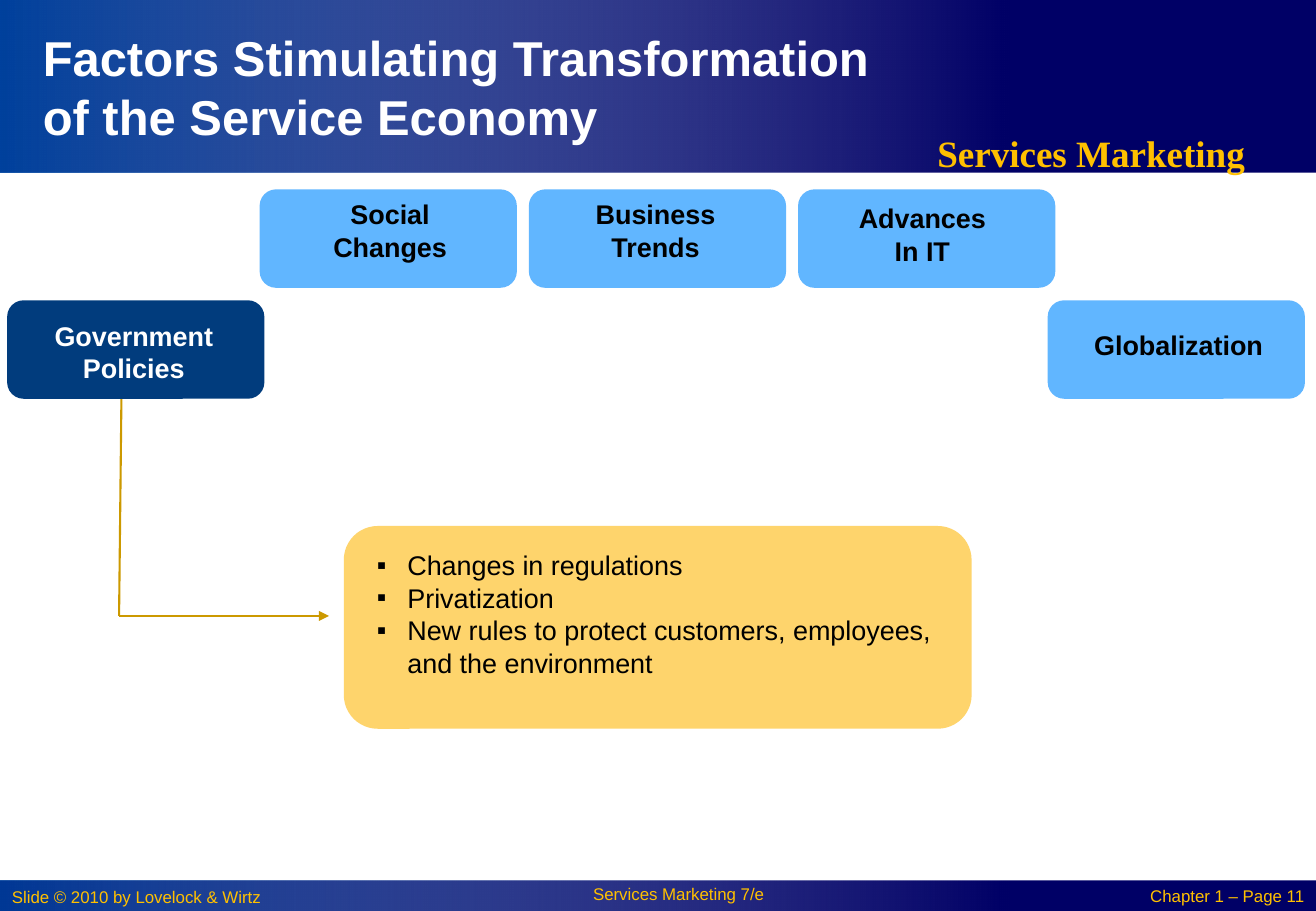
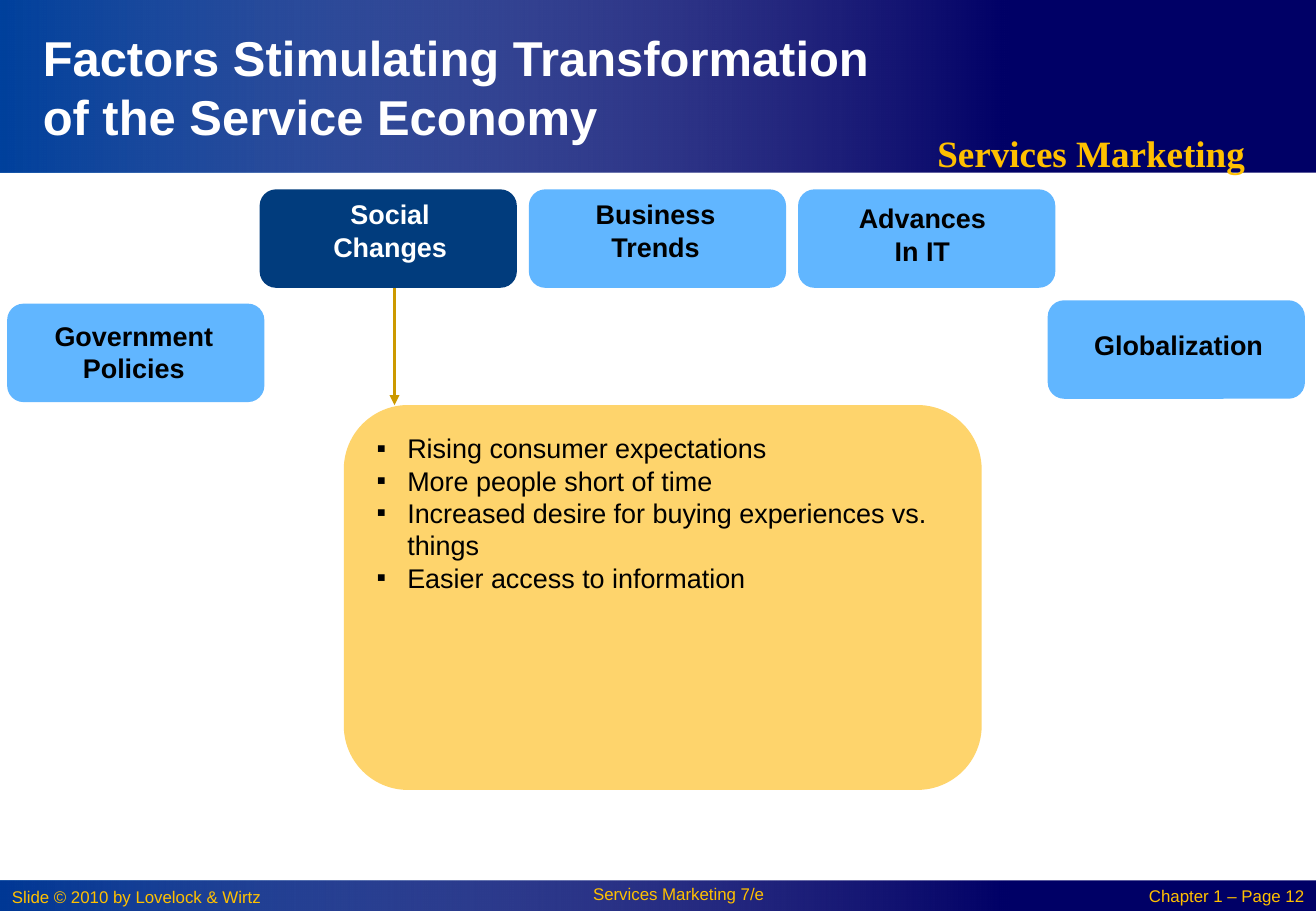
import pptx
import pptx.dml.color
import pptx.enum.dml
import pptx.enum.shapes
import pptx.enum.text
import pptx.oxml.ns
import pptx.util
from lxml import etree

Cm = pptx.util.Cm
Pt = pptx.util.Pt
Shape = pptx.enum.shapes.MSO_SHAPE
Align = pptx.enum.text.PP_ALIGN
Anchor = pptx.enum.text.MSO_ANCHOR
qn = pptx.oxml.ns.qn

WIDTH, HEIGHT = 27.52, 19.05
FADE_WIDTH = 21.16
HEADER_HEIGHT = 3.61
FOOTER_TOP = 18.41
TAB_WIDTH, TAB_HEIGHT = 5.38, 2.06
ROW_LEFT, ROW_PITCH, ROW_TOP = 5.43, 5.63, 3.96
SIDE_TOP = 6.28
CORNER = 0.167

NAVY, BLUE, WHITE, BLACK = "000066", "0152AB", "FFFFFF", "000000"
GOLD, LINE_GOLD, PANEL = "FFC000", "CC9900", "FED46C"
TAB, TAB_ACTIVE = "61B6FF", "013C7D"

TITLE = "Factors Stimulating Transformation of the Service Economy"

# lines, left, top, top of the text, sideways shift of the text
TABS = [
    (["Government", "Policies"], 0.15, SIDE_TOP, 6.68, -0.04),
    (["Social", "Changes"], ROW_LEFT, ROW_TOP, 4.14, 0.04),
    (["Business", "Trends"], ROW_LEFT + ROW_PITCH, ROW_TOP, 4.14, -0.04),
    (["Advances", "In IT"], ROW_LEFT + 2 * ROW_PITCH, ROW_TOP, 4.22, -0.09),
    (["Globalization"], 21.91, SIDE_TOP, 6.88, 0.05),
]

SLIDES = [
    {
        "page": 11,
        "active": "Government",
        "government_top": SIDE_TOP,
        "arrow": [(2.54, 8.26), (2.49, 12.88), (6.88, 12.88)],
        "panel": (7.19, 11, 13.13, 4.24),
        "margins": (0.69, 0.48, 0.58),
        "bullets": [
            "Changes in regulations",
            "Privatization",
            "New rules to protect customers, employees, and the environment",
        ],
    },
    {
        "page": 12,
        "active": "Social",
        "government_top": 6.35,
        "arrow": [(8.25, 5.92), (8.25, 8.47)],
        "panel": (7.19, 8.47, 13.34, 8.05),
        "margins": (0.69, 0.56, 0.46),
        "bullets": [
            "Rising consumer expectations",
            "More people short of time",
            "Increased desire for buying experiences vs. things",
            "Easier access to information",
        ],
    },
]


def color(value):
    return pptx.dml.color.RGBColor.from_string(value)


def assign(target, values):
    for name, value in values.items():
        setattr(target, name, value)


class Deck:
    def __init__(self):
        self.prs = pptx.Presentation()
        self.prs.slide_width, self.prs.slide_height = Cm(WIDTH), Cm(HEIGHT)
        self.s = None

    def new_slide(self, page):
        self.s = self.prs.slides.add_slide(self.prs.slide_layouts[5])
        self.band(FOOTER_TOP, HEIGHT - FOOTER_TOP, 69)
        self.band(0, HEADER_HEIGHT, 80)
        self.text("Services Marketing", (17.78, 2.24, 10.08, 1.57), Align.CENTER, 1.4,
                  size=Pt(22), name="Times New Roman", bold=True)
        self.text("Slide © 2010 by Lovelock & Wirtz", (0, FOOTER_TOP, 6.55, 0.71))
        self.text("Services Marketing 7/e", (10.8, FOOTER_TOP, 6.78, 0.64), Align.CENTER, 0.9)
        self.text(f"Chapter 1 – Page {page}", (23.07, 18.44, 4.45, 0.64), Align.RIGHT, 0.9)

    def title(self, text):
        sp = self.s.shapes.title
        assign(sp, {"left": Cm(0.64), "top": Cm(0.64), "width": Cm(17.98), "height": Cm(2.34)})
        tf = sp.text_frame
        assign(tf, {"word_wrap": True, "vertical_anchor": Anchor.MIDDLE,
                    "auto_size": pptx.enum.text.MSO_AUTO_SIZE.NONE})
        self.fill_text(tf, [text], Align.LEFT, WHITE, size=Pt(29), bold=True)
        # The placeholder comes first on a new slide, so lift it above the header band.
        self.s.shapes._spTree.append(sp._element)

    def fill_text(self, tf, lines, align, ink, spacing=None, bulleted=False, **font):
        for i, line in enumerate(lines):
            p = tf.paragraphs[0] if i == 0 else tf.add_paragraph()
            if bulleted:
                self.bullet(p)
            assign(p, {"alignment": align, "line_spacing": spacing})
            r = p.add_run()
            r.text = line
            assign(r.font, {"name": "Arial", "size": Pt(16), **font})
            r.font.color.rgb = color(ink)

    def bullet(self, p):
        pPr = p._p.get_or_add_pPr()
        pPr.set("marL", str(Cm(0.64)))
        pPr.set("indent", str(-Cm(0.64)))
        etree.SubElement(pPr, qn("a:buFont")).set("typeface", "Arial")
        etree.SubElement(pPr, qn("a:buChar")).set("char", "▪")

    def text(self, text, box, align=Align.LEFT, spacing=None, **font):
        sp = self.s.shapes.add_textbox(*map(Cm, box))
        sp.text_frame.word_wrap = True
        self.fill_text(sp.text_frame, [text], align, GOLD, spacing, **{"size": Pt(10), **font})

    def shape(self, kind, box, fill=None):
        sp = self.s.shapes.add_shape(kind, *map(Cm, box))
        sp.shadow.inherit = False
        sp.line.fill.background()
        if fill:
            sp.fill.solid()
            sp.fill.fore_color.rgb = color(fill)
        return sp

    def band(self, top, height, opacity):
        """Draw a navy band with a blue fade, opacity in percent, over its left part."""
        self.shape(Shape.RECTANGLE, (0, top, WIDTH, height), NAVY)
        sp = self.shape(Shape.RECTANGLE, (0, top, FADE_WIDTH, height))
        sp.fill.gradient()
        sp.fill.gradient_angle = 0
        stops = zip(sp.fill.gradient_stops, (0, 1), (BLUE, WHITE), (opacity, 0))
        for stop, position, value, percent in stops:
            stop.position = position
            stop.color.rgb = color(value)
            clr = stop._gs.find(qn("a:srgbClr"))
            etree.SubElement(clr, qn("a:alpha")).set("val", str(percent * 1000))

    def rounded(self, box, fill, margins):
        """Draw a rounded box; margins (left, top, right) count from its outer edges."""
        sp = self.shape(Shape.ROUNDED_RECTANGLE, box, fill)
        sp.adjustments[0] = CORNER
        inset = 0.293 * CORNER * min(box[2:])  # the corners already push the text in
        left, top, right = (Cm(m - inset) for m in margins)
        tf = sp.text_frame
        assign(tf, {"word_wrap": True, "vertical_anchor": Anchor.TOP, "margin_left": left,
                    "margin_top": top, "margin_right": right, "margin_bottom": 0})
        return tf

    def tab(self, lines, left, top, text_top, shift, active):
        tf = self.rounded((left, top, TAB_WIDTH, TAB_HEIGHT), TAB_ACTIVE if active else TAB,
                          (0.3 + shift, text_top - top, 0.3 - shift))
        self.fill_text(tf, lines, Align.CENTER, WHITE if active else BLACK, bold=True)

    def panel(self, bullets, box, margins):
        tf = self.rounded(box, PANEL, margins)
        self.fill_text(tf, bullets, Align.LEFT, BLACK, bulleted=True)

    def arrow(self, points):
        """Join the points with straight lines, with an arrowhead at the last one."""
        for start, end in zip(points, points[1:]):
            c = self.s.shapes.add_connector(pptx.enum.shapes.MSO_CONNECTOR.STRAIGHT,
                                            *map(Cm, start + end))
            c.line.width = Pt(1.25)
            c.line.color.rgb = color(LINE_GOLD)
            if end == points[-1]:
                etree.SubElement(c.line._get_or_add_ln(), qn("a:tailEnd")).set("type", "triangle")
            etree.SubElement(c._element.spPr, qn("a:effectLst"))


def main():
    deck = Deck()
    for content in SLIDES:
        deck.new_slide(content["page"])
        deck.arrow(content["arrow"])
        deck.title(TITLE)
        for lines, left, top, text_top, shift in TABS:
            if lines[0] == "Government":
                top = content["government_top"]
            deck.tab(lines, left, top, text_top, shift, lines[0] == content["active"])
        deck.panel(content["bullets"], content["panel"], content["margins"])
    deck.prs.save("out.pptx")


if __name__ == "__main__":
    main()
